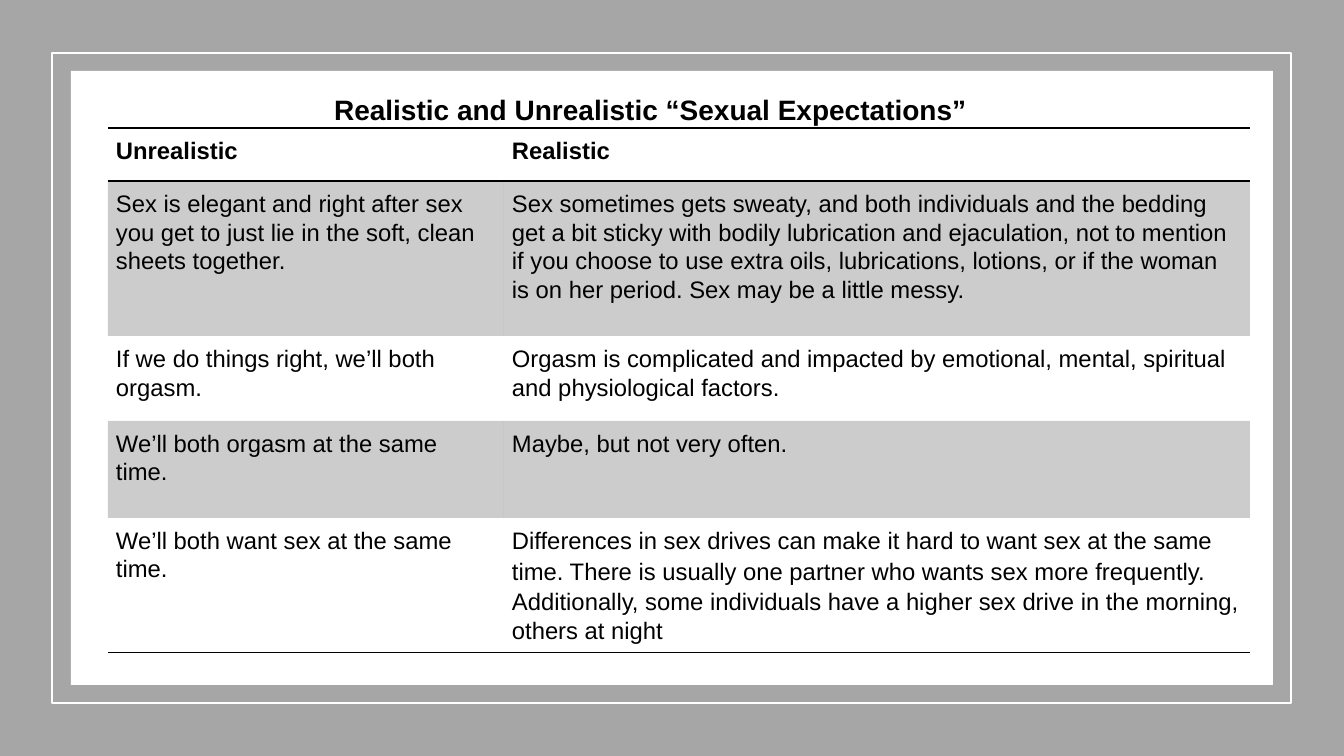
from dataclasses import dataclass

from lxml.etree import SubElement
from pptx import Presentation
from pptx.dml.color import RGBColor
from pptx.enum.shapes import MSO_SHAPE
from pptx.enum.text import MSO_ANCHOR, PP_ALIGN
from pptx.oxml.ns import qn
from pptx.util import Pt

SCALE = 914400 / 100.8
NO_GRID_STYLE = "{2D5ABB26-0587-4C30-8999-92F81FD0307C}"


@dataclass(frozen=True)
class Theme:
    backdrop: str = "A6A6A6"
    paper: str = "FFFFFF"
    ink: str = "000000"
    band_opacity: int = 20
    font: str = "Arial"
    gap_font: str = "Calibri"
    title_size: int = 20
    text_size: int = 17
    gap_size: int = 18
    frame_line: int = 2
    rule_line: int = 1
    line_spacing: float = 1.07


THEME = Theme()

TITLE = "Realistic and Unrealistic “Sexual Expectations”"
EXPECTATIONS = [
    (53, "Unrealistic", ["Realistic"]),
    (155, "Sex is elegant and right after sex you get to just lie in the soft, clean sheets together.",
     ["Sex sometimes gets sweaty, and both individuals and the bedding get a bit sticky with bodily "
      "lubrication and ejaculation, not to mention if you choose to use extra oils, lubrications, "
      "lotions, or if the woman is on her period. Sex may be a little messy."]),
    (85, "If we do things right, we’ll both orgasm.",
     ["Orgasm is complicated and impacted by emotional, mental, spiritual and physiological factors."]),
    (97, "We’ll both orgasm at the same time.", ["Maybe, but not very often."]),
    (135, "We’ll both want sex at the same time.",
     ["Differences in sex drives can make it hard to want sex at the same time. There is usually "
      "one partner who wants sex more frequently.",
      " ",
      "Additionally, some individuals have a higher sex drive in the morning, others at night"]),
]


def px(length):
    return round(length * SCALE)


def color(code):
    return RGBColor.from_string(code)


def set_font(font, size, bold):
    font.name = THEME.font
    font.size = Pt(size)
    font.bold = bold
    font.color.rgb = color(THEME.ink)


def add_panel(slide, box, fill=None, line=None):
    panel = slide.shapes.add_shape(MSO_SHAPE.RECTANGLE, *map(px, box))
    panel.shadow.inherit = False
    if fill:
        panel.fill.solid()
        panel.fill.fore_color.rgb = color(fill)
    else:
        panel.fill.background()
    if line:
        panel.line.color.rgb = color(line)
        panel.line.width = Pt(THEME.frame_line)
    else:
        panel.line.fill.background()


def add_frame(slide, box):
    left, top, width, height = box
    add_panel(slide, box, fill=THEME.backdrop)
    add_panel(slide, (left + 52, top + 53, width - 105, height - 106), line=THEME.paper)
    add_panel(slide, (left + 71, top + 71, width - 142, height - 142), fill=THEME.paper)


def add_title(slide, box):
    title = slide.shapes.title
    slide.shapes._spTree.append(title._element)
    title.left, title.top, title.width, title.height = map(px, box)
    title.text_frame.text = TITLE
    title.text_frame.vertical_anchor = MSO_ANCHOR.TOP
    heading = title.text_frame.paragraphs[0]
    heading.alignment = PP_ALIGN.LEFT
    set_font(heading.font, THEME.title_size, True)


def add_rule(cell, side):
    rule = SubElement(cell._tc.get_or_add_tcPr(), qn(f"a:ln{side}"), w=str(Pt(THEME.rule_line)))
    SubElement(SubElement(rule, qn("a:solidFill")), qn("a:srgbClr"), val=THEME.ink)


def shade(cell):
    cell.fill.solid()
    cell.fill.fore_color.rgb = color(THEME.ink)
    ink = cell._tc.tcPr.find(qn("a:solidFill")).find(qn("a:srgbClr"))
    SubElement(ink, qn("a:alpha"), val=str(THEME.band_opacity * 1000))


def write_cell(cell, parts, bold):
    cell.margin_left = cell.margin_right = cell.margin_top = cell.margin_bottom = px(8)
    paragraph = cell.text_frame.paragraphs[0]
    paragraph.line_spacing = THEME.line_spacing
    set_font(paragraph.font, THEME.text_size, bold)
    for part in parts:
        run = paragraph.add_run()
        run.text = part
        set_font(run.font, THEME.text_size, bold)
        if part == " ":
            run.font.name = THEME.gap_font
            run.font.size = Pt(THEME.gap_size)


def add_expectations(slide, box):
    left, top, width, height = box
    frame = slide.shapes.add_table(len(EXPECTATIONS), 2, *map(px, box))
    table = frame.table
    table.first_row = table.horz_banding = False
    table._tbl.tblPr.find(qn("a:tableStyleId")).text = NO_GRID_STYLE
    unrealistic_width = 396
    table.columns[0].width = px(unrealistic_width)
    table.columns[1].width = px(width - unrealistic_width)
    last = len(EXPECTATIONS) - 1
    for index, (row_height, unrealistic, realistic) in enumerate(EXPECTATIONS):
        table.rows[index].height = px(row_height)
        for column, parts in enumerate(([unrealistic], realistic)):
            cell = table.cell(index, column)
            write_cell(cell, parts, index == 0)
            if index == 0:
                add_rule(cell, "T")
            if index in (0, last):
                add_rule(cell, "B")
            if index % 2:
                shade(cell)
            else:
                cell.fill.background()


def main():
    deck = Presentation()
    deck.slide_width, deck.slide_height = px(1344), px(756)
    slide = deck.slides.add_slide(deck.slide_layouts[5])
    add_frame(slide, (0, 0, 1344, 756))
    add_expectations(slide, (108, 128, 1142, 525))
    add_title(slide, (324, 87, 698, 44))
    deck.save("out.pptx")


if __name__ == "__main__":
    main()
